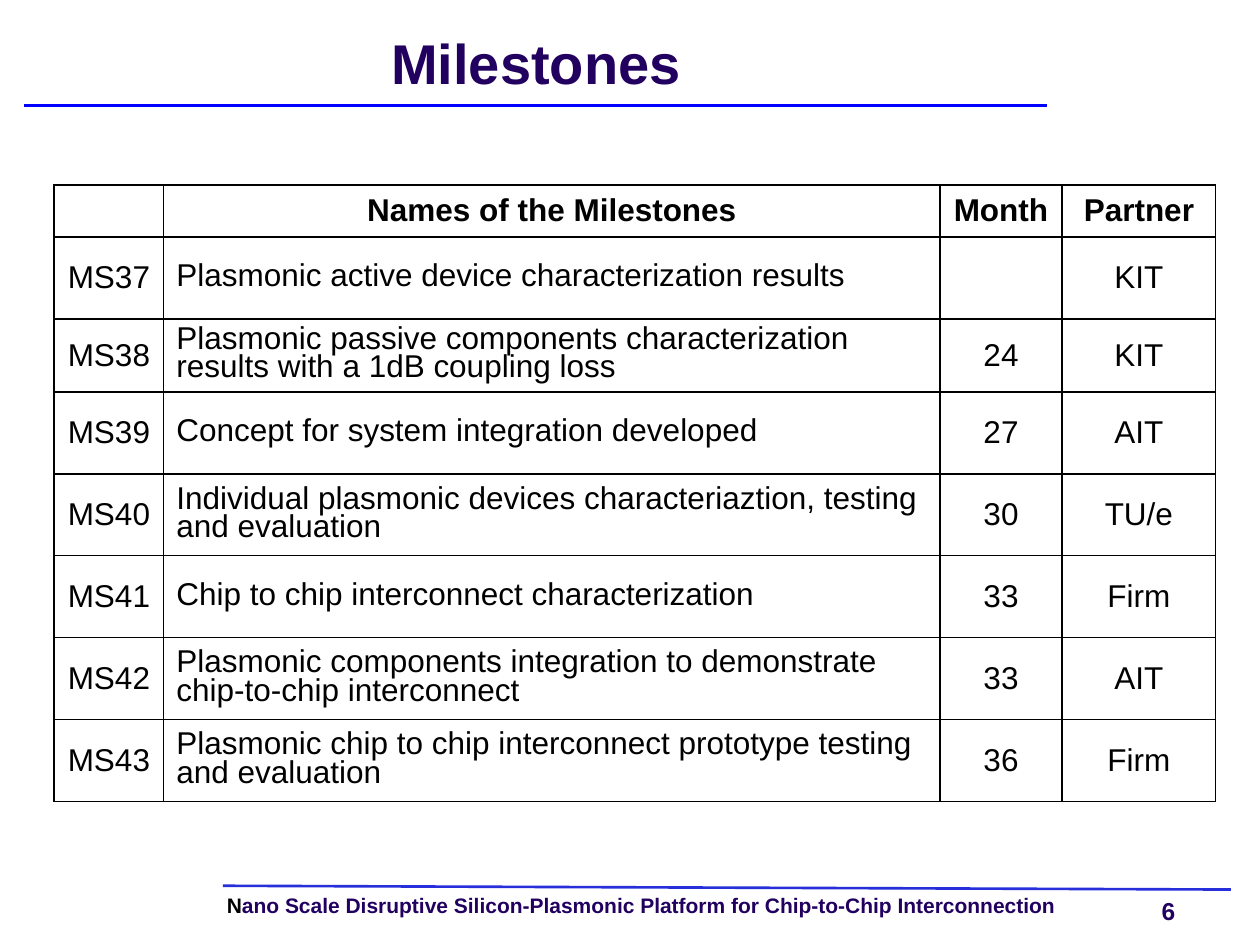
from lxml import etree
from pptx import Presentation
from pptx.dml.color import RGBColor
from pptx.enum.shapes import MSO_CONNECTOR
from pptx.enum.text import MSO_ANCHOR, PP_ALIGN
from pptx.oxml.ns import qn
from pptx.util import Inches, Pt

LEFT, CENTER = PP_ALIGN.LEFT, PP_ALIGN.CENTER
TOP, MIDDLE = MSO_ANCHOR.TOP, MSO_ANCHOR.MIDDLE
STRAIGHT = MSO_CONNECTOR.STRAIGHT
TITLE_ONLY = 5

COLORS = {
    "text": "000000",
    "accent": "220060",
    "title_rule": "0000FF",
    "footer_rule": "262FDA",
    "border": "000000",
}
FONT = "Arial"

HEADER = ["", "Names of the Milestones", "Month", "Partner"]
MILESTONES = [
    ("MS37", "Plasmonic active device characterization results", "", "KIT"),
    ("MS38", "Plasmonic passive components characterization results with a 1dB coupling loss", "24", "KIT"),
    ("MS39", "Concept for system integration developed", "27", "AIT"),
    ("MS40", "Individual plasmonic devices characteriaztion, testing and evaluation", "30", "TU/e"),
    ("MS41", "Chip to chip interconnect characterization", "33", "Firm"),
    ("MS42", "Plasmonic components integration to demonstrate chip-to-chip interconnect", "33", "AIT"),
    ("MS43", "Plasmonic chip to chip interconnect prototype testing and evaluation", "36", "Firm"),
]
NAME_COLUMN = 1
COLUMN_WIDTHS = [0.87, 6.16, 0.97, 1.22]
ROW_HEIGHTS = [0.41, 0.65, 0.58] + [0.65] * 5


def write(tf, runs, size=18, bold=False, align=LEFT, spacing=None):
    """Fill the first paragraph with (text, colour name) runs."""
    p = tf.paragraphs[0]
    p.alignment = align
    if spacing:
        p.line_spacing = spacing
    p.space_before = Pt(0)
    for text, color in runs:
        r = p.add_run()
        r.text = text
        r.font.name = FONT
        r.font.size = Pt(size)
        r.font.bold = bold
        r.font.color.rgb = RGBColor.from_string(COLORS[color])


def frame(tf, anchor=TOP, wrap=True):
    """Remove the margins and set anchor and wrapping."""
    tf.margin_left = tf.margin_right = tf.margin_top = tf.margin_bottom = 0
    tf.vertical_anchor = anchor
    tf.word_wrap = wrap


def add_borders(cell, color, width=1):
    tc_pr = cell._tc.get_or_add_tcPr()
    for side in ("a:lnL", "a:lnR", "a:lnT", "a:lnB"):
        ln = etree.SubElement(tc_pr, qn(side), w=str(Pt(width)))
        fill = etree.SubElement(ln, qn("a:solidFill"))
        etree.SubElement(fill, qn("a:srgbClr"), val=color)


class SlideBuilder:
    def __init__(self, prs):
        self.slide = prs.slides.add_slide(prs.slide_layouts[TITLE_ONLY])

    def title(self, text, x, y, w, h):
        sp = self.slide.shapes.title
        sp.left, sp.top, sp.width, sp.height = map(Inches, (x, y, w, h))
        frame(sp.text_frame, MIDDLE)
        write(sp.text_frame, [(text, "accent")], size=32, bold=True,
              align=CENTER, spacing=Pt(32))

    def text(self, runs, x, y, w, h, wrap=True, **style):
        sp = self.slide.shapes.add_textbox(*map(Inches, (x, y, w, h)))
        frame(sp.text_frame, wrap=wrap)
        write(sp.text_frame, runs, **style)

    def line(self, x1, y1, x2, y2, color):
        line = self.slide.shapes.add_connector(STRAIGHT, *map(Inches, (x1, y1, x2, y2)))
        line.line.color.rgb = RGBColor.from_string(COLORS[color])
        line.line.width = Pt(1.5)
        etree.SubElement(line._element.spPr, qn("a:effectLst"))

    def table(self, rows, x, y, widths, heights):
        table = self.slide.shapes.add_table(
            len(rows), len(widths), Inches(x), Inches(y),
            Inches(sum(widths)), Inches(sum(heights))).table
        table.first_row = table.horz_banding = False
        for column, width in zip(table.columns, widths):
            column.width = Inches(width)
        for row, height in zip(table.rows, heights):
            row.height = Inches(height)
        for i, row in enumerate(rows):
            for j, text in enumerate(row):
                cell = table.cell(i, j)
                cell.vertical_anchor = MIDDLE
                add_borders(cell, COLORS["border"])
                cell.fill.background()
                if not text:
                    continue
                is_name = i > 0 and j == NAME_COLUMN
                write(cell.text_frame, [(text, "text")], bold=i == 0,
                      align=LEFT if is_name else CENTER,
                      spacing=0.8 if is_name else None)


def main():
    prs = Presentation()
    prs.slide_width, prs.slide_height = Inches(10), Inches(7.5)
    s = SlideBuilder(prs)
    s.text([("N", "text"),
            ("ano Scale Disruptive Silicon-Plasmonic Platform for Chip-to-Chip Interconnection", "accent")],
           1.8, 7.11, 7.14, 0.18, size=12, bold=True, spacing=0.9)
    s.text([("6", "accent")], 9.22, 7.11, 0.24, 0.23, wrap=False, size=14, bold=True)
    s.line(1.77, 7.03, 9.77, 7.06, "footer_rule")
    s.line(0.19, 0.84, 8.31, 0.84, "title_rule")
    s.title("Milestones", 0.2, 0.2, 8.11, 0.67)
    s.table([HEADER, *MILESTONES], 0.43, 1.47, COLUMN_WIDTHS, ROW_HEIGHTS)
    prs.save("out.pptx")


if __name__ == "__main__":
    main()
